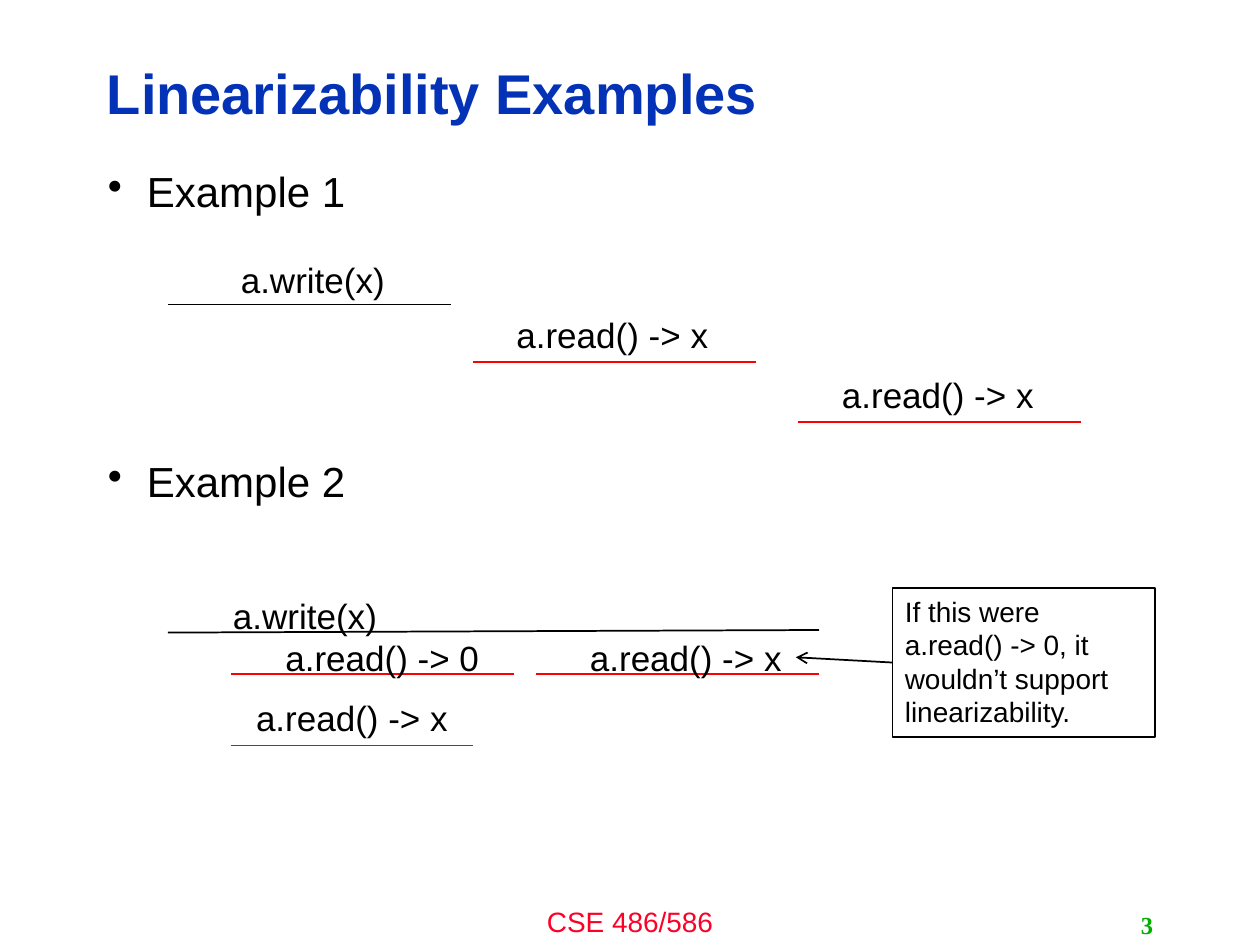
import collections

import lxml.etree
import pptx
import pptx.dml.color
import pptx.enum.shapes
import pptx.enum.text
import pptx.oxml.ns
import pptx.util

COLUMNS, ROWS = 120, 90
WIDTH, HEIGHT = pptx.util.Inches(10), pptx.util.Inches(7.5)
BLACK, RED = "000000", "FF0000"
ALIGN = pptx.enum.text.PP_ALIGN
ANCHOR = pptx.enum.text.MSO_ANCHOR

Box = collections.namedtuple("Box", "left top width height")
Operation = collections.namedtuple(
    "Operation", "text label_left label_top start end start_row end_row color")

EXAMPLE_1 = [
    Operation("a.write(x)", 5.75, 0, 0, 27, 5, 5, BLACK),
    Operation("a.read() -> x", 32, 5.25, 29, 56, 10.5, 10.5, RED),
    Operation("a.read() -> x", 63, 11, 60, 87, 16.2, 16.2, RED),
]
EXAMPLE_2 = [
    Operation("a.write(x)", 5, 0, 0, 62, 4.25, 4, BLACK),
    Operation("a.read() -> 0", 10, 4, 6, 33, 8.2, 8.2, RED),
    Operation("a.read() -> x", 39, 4, 35, 62, 8.2, 8.2, RED),
    Operation("a.read() -> x", 7.2, 9.75, 6, 29, 15, 15, RED),
]


def x(column):
    """Return the horizontal length of a number of grid columns."""
    return round(WIDTH * column / COLUMNS)


def y(row):
    """Return the vertical length of a number of grid rows."""
    return round(HEIGHT * row / ROWS)


def place(box):
    """Return a grid box as slide lengths."""
    return x(box.left), y(box.top), x(box.width), y(box.height)


def rgb(color):
    """Return the colour for a hex string."""
    return pptx.dml.color.RGBColor.from_string(color)


def add_run(paragraph, text, size, color=BLACK, bold=False, font="Arial"):
    """Add one styled run to a paragraph."""
    run = paragraph.add_run()
    run.text = text
    run.font.size = pptx.util.Pt(size)
    run.font.name = font
    run.font.bold = bold
    run.font.color.rgb = rgb(color)


def add_text(slide, box, text, size, align=ALIGN.LEFT, anchor=ANCHOR.TOP, wrap=True, **style):
    """Add a text box holding one line of text."""
    frame = slide.shapes.add_textbox(*place(box)).text_frame
    frame.word_wrap = wrap
    frame.vertical_anchor = anchor
    paragraph = frame.paragraphs[0]
    paragraph.alignment = align
    add_run(paragraph, text, size, **style)
    return paragraph


def add_line(slide, start, end, color, arrow=False):
    """Add a straight line between two grid points."""
    line = slide.shapes.add_connector(
        pptx.enum.shapes.MSO_CONNECTOR.STRAIGHT,
        x(start[0]), y(start[1]), x(end[0]), y(end[1]))
    line.line.color.rgb = rgb(color)
    line.line.width = pptx.util.Pt(1)
    properties = line._element.spPr
    if arrow:
        lxml.etree.SubElement(
            line.line._get_or_add_ln(), pptx.oxml.ns.qn("a:tailEnd"), type="arrow")
    lxml.etree.SubElement(properties, pptx.oxml.ns.qn("a:effectLst"))


def add_title(slide, box):
    """Add the slide title."""
    paragraph = add_text(slide, box, "Linearizability Examples", 32,
                         anchor=ANCHOR.MIDDLE, color="0332B7", bold=True)
    paragraph.line_spacing = 0.9


def add_headings(slide, box, headings, gap):
    """Add bulleted headings with a gap between them."""
    frame = slide.shapes.add_textbox(*place(box)).text_frame
    frame.word_wrap = True
    for index, heading in enumerate(headings):
        paragraph = frame.add_paragraph() if index else frame.paragraphs[0]
        paragraph.line_spacing = 0.9
        paragraph.space_before = pptx.util.Pt(gap if index else 0)
        properties = paragraph._p.get_or_add_pPr()
        indent = pptx.util.Inches(0.31)
        properties.set("marL", str(indent))
        properties.set("indent", str(-indent))
        lxml.etree.SubElement(properties, pptx.oxml.ns.qn("a:buChar"), char="•")
        add_run(paragraph, heading, 24)


def add_timeline(slide, box, operations):
    """Add labelled operation spans relative to a box."""
    for operation in operations:
        add_line(slide,
                 (box.left + operation.start, box.top + operation.start_row),
                 (box.left + operation.end, box.top + operation.end_row),
                 operation.color)
        label = Box(box.left + operation.label_left, box.top + operation.label_top, 21, 5.25)
        add_text(slide, label, operation.text, 20, wrap=False)


def add_callout(slide, box, text):
    """Add a bordered remark with an arrow to its left."""
    shape = slide.shapes.add_shape(pptx.enum.shapes.MSO_SHAPE.RECTANGLE, *place(box))
    shape.shadow.inherit = False
    shape.fill.background()
    shape.line.color.rgb = rgb(BLACK)
    shape.line.width = pptx.util.Pt(0.75)
    frame = shape.text_frame
    frame.word_wrap = True
    frame.vertical_anchor = ANCHOR.TOP
    frame.paragraphs[0].alignment = ALIGN.LEFT
    add_run(frame.paragraphs[0], text, 16)
    middle = box.top + box.height / 2
    add_line(slide, (box.left, middle), (box.left - 9.2, middle - 0.5), BLACK, arrow=True)


def add_footer(slide, box):
    """Add the course name and the slide number."""
    add_text(slide, Box(box.left + 40, box.top, 40, box.height), "CSE 486/586", 16,
             align=ALIGN.CENTER, color="FC0128")
    add_text(slide, Box(box.left + 86, box.top + 0.6, 25, 3.8), "3", 14,
             align=ALIGN.RIGHT, anchor=ANCHOR.MIDDLE,
             color="00AE00", bold=True, font="Times New Roman")


def main():
    """Build and save the slide."""
    presentation = pptx.Presentation()
    presentation.slide_width, presentation.slide_height = WIDTH, HEIGHT
    slide = presentation.slides.add_slide(presentation.slide_layouts[6])
    add_footer(slide, Box(0, 85.6, COLUMNS, 4.4))
    add_title(slide, Box(9, 4.3, 95.8, 9.7))
    add_headings(slide, Box(9.1, 15.7, 100.8, 64.7), ["Example 1", "Example 2"], 140)
    add_timeline(slide, Box(16, 24, 87, 17), EXAMPLE_1)
    add_timeline(slide, Box(16, 56, 62, 15), EXAMPLE_2)
    add_callout(slide, Box(85, 56, 25, 14.2),
                "If this were a.read() -> 0, it wouldn’t support linearizability.")
    presentation.save("out.pptx")


if __name__ == "__main__":
    main()
